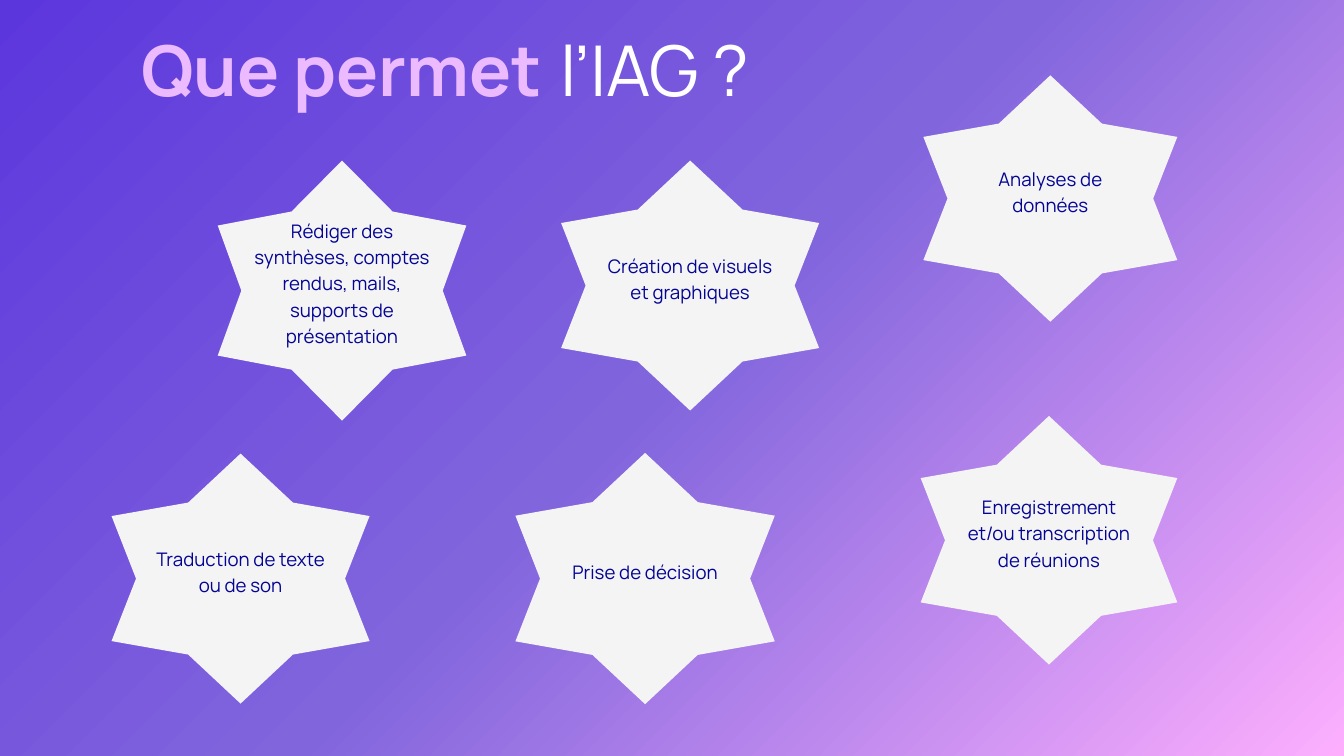
import copy

import pptx
import pptx.dml.color
import pptx.enum.text
import pptx.oxml.ns
import pptx.util

# Half outline of the six-pointed star, as shares of its width and height
RIGHT_SIDE = [(0.5, 0), (0.703, 0.196), (1, 0.25), (0.905, 0.5),
              (1, 0.75), (0.703, 0.804), (0.5, 1)]
STAR = RIGHT_SIDE + [(1 - x, y) for x, y in RIGHT_SIDE[-2:0:-1]]

# Uses of generative AI: left, top, width, height in percent of the slide
USES = [
    ("Rédiger des synthèses, comptes rendus, mails, supports de présentation",
     (16.2, 21.24, 18.5, 34.4)),
    ("Création de visuels et graphiques", (41.75, 21.24, 19.2, 33.07)),
    ("Analyses de données", (68.7, 9.96, 18.9, 32.6)),
    ("Enregistrement et/ou transcription de réunions", (68.5, 55.02, 19.1, 32.89)),
    ("Traduction de texte ou de son", (8.3, 60, 19.2, 33.07)),
    ("Prise de décision", (38.35, 59.91, 19.3, 33.24)),
]


def color(code):
    return pptx.dml.color.RGBColor.from_string(code)


class SlideBuilder:
    font = "Manrope"
    ink = "040494"
    star_fill = "F4F4F4"

    def __init__(self, deck):
        self.width, self.height = deck.slide_width, deck.slide_height
        self.page = deck.slides.add_slide(deck.slide_layouts[6])

    def area(self, left, top, width, height):
        """Turn percentages of the slide into lengths."""
        return (int(left * self.width / 100), int(top * self.height / 100),
                int(width * self.width / 100), int(height * self.height / 100))

    def background(self, colors, angle):
        fill = self.page.background.fill
        fill.gradient()
        fill.gradient_angle = angle
        stop_list = self.page.element.find(".//" + pptx.oxml.ns.qn("a:gsLst"))
        while len(stop_list) < len(colors):
            stop_list.append(copy.deepcopy(stop_list[-1]))
        for index, (stop, code) in enumerate(zip(fill.gradient_stops, colors)):
            stop.color.rgb = color(code)
            stop.position = index / (len(colors) - 1)

    def text(self, shapes, words, area, size, code, spacing, bold=False, inset=0):
        box = shapes.add_textbox(*area)
        frame = box.text_frame
        frame.text = words
        frame.word_wrap = True
        frame.margin_left = frame.margin_right = pptx.util.Inches(inset)
        frame.margin_top = frame.margin_bottom = pptx.util.Inches(inset)
        para = frame.paragraphs[0]
        para.alignment = pptx.enum.text.PP_ALIGN.CENTER
        para.line_spacing = pptx.util.Pt(spacing)
        font = para.runs[0].font
        font.name, font.size, font.bold = self.font, pptx.util.Pt(size), bold
        font.color.rgb = color(code)
        return frame

    def title(self, words, place, code, bold=False):
        frame = self.text(self.page.shapes, words, self.area(*place), 75, code, 82.5, bold)
        frame.auto_size = pptx.enum.text.MSO_AUTO_SIZE.SHAPE_TO_FIT_TEXT

    def star(self, words, place):
        left, top, width, height = self.area(*place)
        group = self.page.shapes.add_group_shape()
        points = [(left + x * width, top + y * height) for x, y in STAR]
        outline = group.shapes.build_freeform(*points[0])
        outline.add_line_segments(points[1:])
        shape = outline.convert_to_shape()
        shape.shadow.inherit = False
        shape.fill.solid()
        shape.fill.fore_color.rgb = color(self.star_fill)
        shape.line.fill.background()
        label = [int(value) for value in (left + 0.125 * width, top + 0.133 * height,
                                          0.75 * width, 0.664 * height)]
        frame = self.text(group.shapes, words, label, 20, self.ink, 28, inset=0.06)
        frame.vertical_anchor = pptx.enum.text.MSO_ANCHOR.MIDDLE


def main():
    deck = pptx.Presentation()
    deck.slide_width = pptx.util.Inches(20)
    deck.slide_height = pptx.util.Inches(11.25)
    builder = SlideBuilder(deck)

    # Diagonal gradient from top left to bottom right
    builder.background(["5C36DD", "8165DD", "FDAFFE"], 315)

    # Two-tone title
    builder.title("l’IAG ?", (21.2, 4.44, 55.1, 10.4), "FFFFFF")
    builder.title("Que permet", (5.3, 4.44, 40.2, 11.11), "EBBAFF", bold=True)

    # One star for each use
    for words, place in USES:
        builder.star(words, place)

    deck.save("out.pptx")


if __name__ == "__main__":
    main()
